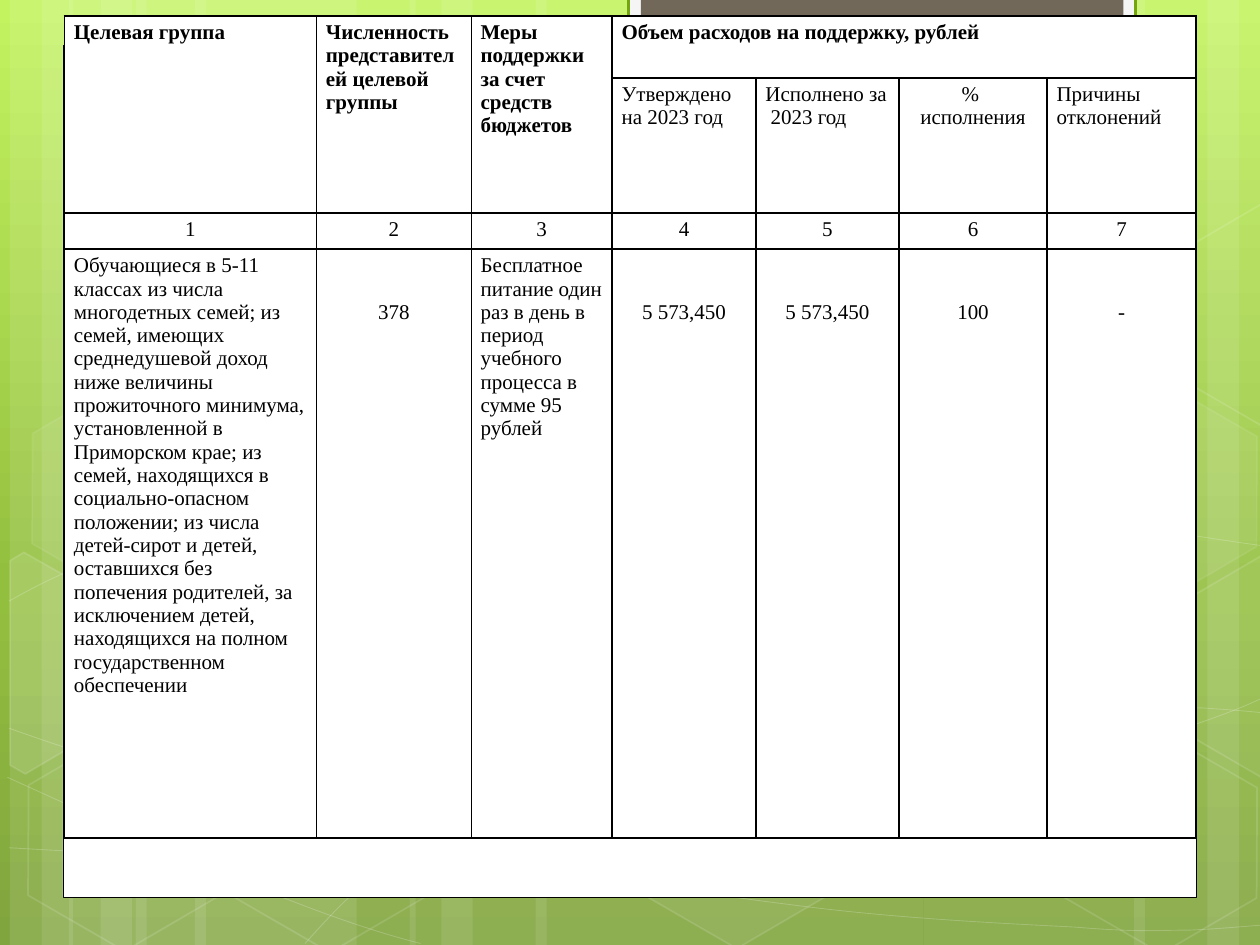
import math
from copy import deepcopy
from dataclasses import dataclass
from typing import Optional

from lxml import etree
from pptx import Presentation, util as u
from pptx.dml.color import RGBColor
from pptx.enum import shapes, text
from pptx.oxml.ns import qn


@dataclass(frozen=True)
class Theme:
    white: str = "FFFFFF"
    black: str = "000000"
    tab_edge: str = "F5F5F5"
    tab_line: str = "74A510"
    tab: str = "71685A"
    sky: tuple = ((0, "C3F35F"), (0.62, "93BF3F"), (1, "81A53E"))
    font: str = "Times New Roman"
    size: int = 12


THEME = Theme()


@dataclass
class Look:
    """Fill and outline; opacities in percent."""
    fill: Optional[str] = None
    fill_alpha: int = 100
    line: Optional[str] = None
    line_alpha: int = 100
    width: float = 1


@dataclass
class Block:
    left: float
    top: float
    width: float
    height: float
    look: Look
    kind: shapes.MSO_SHAPE = shapes.MSO_SHAPE.RECTANGLE
    rotation: float = 0
    adjustments: tuple = ()


@dataclass
class Entry:
    lines: list
    bold: bool = False
    centred: bool = False
    top: float = 0.1
    span: tuple = (1, 1)


def paint(target, colour: Optional[str], alpha: int) -> None:
    if colour is None:
        target.background()
        return
    target.solid()
    target.fore_color.rgb = RGBColor.from_string(colour)
    if alpha < 100:
        node = target._xPr.find(".//" + qn("a:srgbClr"))
        etree.SubElement(node, qn("a:alpha"), val=str(alpha * 1000))


def dress(shape, look: Look) -> None:
    shape.shadow.inherit = False
    paint(shape.fill, look.fill, look.fill_alpha)
    paint(shape.line.fill, look.line, look.line_alpha)
    if look.line:
        shape.line.width = u.Pt(look.width)


def draw_block(page, block: Block) -> None:
    frame = (u.Cm(v) for v in (block.left, block.top, block.width, block.height))
    shape = page.shapes.add_shape(block.kind, *frame)
    shape.rotation = block.rotation
    for index, value in enumerate(block.adjustments):
        shape.adjustments[index] = value
    dress(shape, block.look)


def draw_outline(page, points: list, look: Look, close: bool):
    spots = [(u.Cm(x), u.Cm(y)) for x, y in points]
    builder = page.shapes.build_freeform(*spots[0], scale=1.0)
    builder.add_line_segments(spots[1:], close=close)
    shape = builder.convert_to_shape()
    dress(shape, look)
    return shape


def draw_curve(page, knots: list) -> None:
    """Draw the knots, then turn every three segments into one cubic curve."""
    look = Look(line=THEME.white, line_alpha=20, width=0.5)
    shape = draw_outline(page, knots, look, False)
    segments = shape._element.findall(".//" + qn("a:lnTo"))
    for start in range(0, len(segments), 3):
        curve = etree.Element(qn("a:cubicBezTo"))
        segments[start].addprevious(curve)
        for segment in segments[start:start + 3]:
            curve.append(segment[0])
            segment.getparent().remove(segment)


def draw_cut_hexagon(page, points: list, centre: tuple, look: Look, angle: float = 30) -> None:
    """Draw the outline upright and let the shape's rotation tilt it."""
    cos, sin = math.cos(math.radians(angle)), math.sin(math.radians(angle))
    offsets = [(x - centre[0], y - centre[1]) for x, y in points]
    upright = [(centre[0] + x * cos + y * sin, centre[1] - x * sin + y * cos)
               for x, y in offsets]
    draw_outline(page, upright, look, True).rotation = angle


def glass(fill_alpha: int, line_alpha: int) -> Look:
    return Look(THEME.white if fill_alpha else None, fill_alpha, THEME.white, line_alpha)


def fill_cell(cell, entry: Entry) -> None:
    properties = cell._tc.get_or_add_tcPr()
    for side in ("lnL", "lnR", "lnT", "lnB"):
        edge = etree.SubElement(properties, qn("a:" + side), w=str(u.Pt(1)))
        solid = etree.SubElement(edge, qn("a:solidFill"))
        etree.SubElement(solid, qn("a:srgbClr"), val=THEME.black)
    paint(cell.fill, THEME.white, 100)
    margins = {"margin_left": 0.19, "margin_right": 0.19,
               "margin_top": entry.top, "margin_bottom": 0.1}
    for name, value in margins.items():
        setattr(cell, name, u.Cm(value))
    formats = {"name": THEME.font, "size": u.Pt(THEME.size), "bold": entry.bold}
    for index, line in enumerate(entry.lines):
        frame = cell.text_frame
        para = frame.add_paragraph() if index else frame.paragraphs[0]
        para.alignment = text.PP_ALIGN.CENTER if entry.centred else text.PP_ALIGN.LEFT
        span = para.add_run()
        span.text = line
        for name, value in formats.items():
            setattr(span.font, name, value)
        span.font.color.rgb = RGBColor.from_string(THEME.black)


# Background decoration, in centimetres
STRIPES = [(left + shift, width) for shift, wide in ((0, 4.45), (1.19, 4.45), (8.06, 7.82))
           for left, width in ((2.74, wide), (0.2, 1.27), (0.84, 2.12))]
STRIPES += [(18.63, 4.45), (24.34, 1.27), (22.86, 2.12)]

CURVES = [
    [(0.18, 17.09), (1.55, 17.17), (2.92, 17.25), (4.83, 17.22), (6.73, 17.2), (9.09, 17.15),
     (11.63, 16.89), (14.17, 16.64), (17.78, 16.15), (20.12, 15.67), (22.43, 15.19),
     (24.82, 14.43), (25.58, 14)],
    [(0.18, 12.12), (0.91, 11.71), (1.65, 11.33), (3.07, 10.95), (4.52, 10.57), (6.58, 10.01),
     (8.81, 9.83), (11.07, 9.65), (13.82, 9.63), (16.61, 9.83), (19.41, 10.03),
     (24.05, 10.82), (25.58, 11.02)],
    [(0.15, 15.67), (3.23, 17.07), (6.27, 18.47), (8.48, 19.02)],
    [(0.18, 14.68), (0.97, 14.96), (1.78, 15.24), (3.25, 15.65), (4.72, 16.03), (6.93, 16.66),
     (9.07, 17.09), (11.18, 17.53), (13.84, 17.98), (15.95, 18.24), (18.06, 18.52),
     (20.32, 18.62), (21.67, 18.69), (22.99, 18.8), (23.34, 18.75), (24, 18.75),
     (24.66, 18.72), (25.12, 18.67), (25.58, 18.64)],
    [(6.15, 19.02), (6.6, 18.52), (7.06, 18.01), (7.67, 17.55), (8.28, 17.09), (9.14, 16.59),
     (9.86, 16.23), (10.57, 15.88), (11, 15.72), (11.94, 15.47), (12.85, 15.21),
     (14.55, 14.86), (15.44, 14.68), (16.36, 14.5), (16.48, 14.5), (17.27, 14.45),
     (18.06, 14.38), (19.3, 14.3), (20.17, 14.27), (21.06, 14.25), (22.5, 14.27),
     (22.5, 14.27), (22.5, 14.27), (24.21, 14.27), (24.21, 14.27), (24.66, 14.3),
     (25.1, 14.33), (25.55, 14.38)],
]
# left, top, fill opacity, line opacity
HEXAGONS = [(8.48, 0.91, 4, 8), (12.62, 14.96, 6, 12), (0.28, 15.01, 0, 12),
            (0.36, 7.92, 7, 8), (4.42, 15.04, 0, 12), (19.13, 11.51, 10, 12),
            (21.18, 15.06, 0, 12), (21.18, 7.98, 7, 8)]
LEFT_PART = [(0.2, 11.3), (0.48, 11.13), (2.44, 12.24), (2.41, 14.48), (0.51, 15.6), (0.2, 15.42)]
RIGHT_PART = [(23.52, 12.32), (25.43, 11.2), (25.63, 11.33), (25.63, 15.57), (25.45, 15.67),
              (23.52, 14.55)]

# Table content; None marks a cell covered by a merge
COLUMNS = (5.08, 3.12, 2.84, 2.9, 2.88, 2.99, 3)
ROWS = (1.25, 2.72, 0.73, 11.87)
HEADS = ("Целевая группа", "Численность представителей целевой группы",
         "Меры поддержки за счет средств бюджетов")


def figure(value: str) -> Entry:
    return Entry([value], centred=True, top=1.04)


TABLE = [
    [Entry([head], bold=True, span=(2, 1)) for head in HEADS]
    + [Entry(["Объем расходов на поддержку, рублей"], bold=True, span=(1, 4)), None, None, None],
    [None, None, None, Entry(["Утверждено на 2023 год"]), Entry(["Исполнено за  2023 год"]),
     Entry(["% ", "исполнения"], centred=True), Entry(["Причины отклонений"])],
    [Entry([str(number)], centred=True) for number in range(1, 8)],
    [Entry(["Обучающиеся в 5-11 классах из числа многодетных семей; из семей, имеющих "
            "среднедушевой доход ниже величины прожиточного минимума, установленной в "
            "Приморском крае; из семей, находящихся в социально-опасном положении; из числа "
            "детей-сирот и детей, оставшихся без попечения родителей, за исключением детей, "
            "находящихся на полном государственном обеспечении"]),
     figure("378"),
     Entry(["Бесплатное питание один раз в день в период учебного процесса в сумме 95 рублей"]),
     figure("5 573,450"), figure("5 573,450"), figure("100"), figure("-")],
]


def draw_sky(layout) -> None:
    sky = layout.background.fill
    sky.gradient()
    sky.gradient_angle = 270
    stops = layout.element.find(".//" + qn("a:gsLst"))
    stops.append(deepcopy(stops[0]))
    for stop, (position, colour) in zip(sky.gradient_stops, THEME.sky):
        stop.position = position
        stop.color.rgb = RGBColor.from_string(colour)


def draw_decoration(page) -> None:
    for left, width in STRIPES:
        draw_block(page, Block(left, 0, width, 19.05, Look(THEME.white, 10)))
    for knots in CURVES:
        draw_curve(page, knots)
    for left, top, fill_alpha, line_alpha in HEXAGONS:
        draw_block(page, Block(left, top, 4.45, 3.86, glass(fill_alpha, line_alpha),
                               shapes.MSO_SHAPE.HEXAGON, 30, (0.285, 1.155)))
    draw_cut_hexagon(page, LEFT_PART, (0.91, 13.59), glass(10, 12))
    for rise, look in ((0, glass(4, 12)), (7.09, glass(0, 12))):
        raised = [(x, y - rise) for x, y in RIGHT_PART]
        draw_cut_hexagon(page, raised, (25.02, 13.21 - rise), look)
    # White panel and the tab on its top edge
    draw_block(page, Block(1.27, 0.91, 22.86, 17.18, Look(THEME.white, line=THEME.black, width=0.5)))
    draw_block(page, Block(12.67, -0.05, 10.22, 1.93,
                           Look(THEME.tab_edge, line=THEME.tab_line, width=1.5)))
    draw_block(page, Block(12.92, -0.05, 9.73, 1.73, Look(THEME.tab)))


def move_to_layout(page, layout) -> None:
    for holder in list(layout.placeholders):
        holder._element.getparent().remove(holder._element)
    for shape in list(page.shapes):
        layout.shapes._spTree.append(shape._element)


def draw_table(page) -> None:
    table = page.shapes.add_table(len(ROWS), len(COLUMNS), u.Cm(1.3), u.Cm(0.32),
                                  u.Cm(sum(COLUMNS)), u.Cm(sum(ROWS))).table
    for column, width in zip(table.columns, COLUMNS):
        column.width = u.Cm(width)
    for row, height in zip(table.rows, ROWS):
        row.height = u.Cm(height)
    for r, entries in enumerate(TABLE):
        for c, entry in enumerate(entries):
            cell = table.cell(r, c)
            fill_cell(cell, entry or Entry([]))
            if entry and entry.span != (1, 1):
                cell.merge(table.cell(r + entry.span[0] - 1, c + entry.span[1] - 1))


def main() -> None:
    deck = Presentation()
    deck.slide_width, deck.slide_height = u.Cm(25.4), u.Cm(19.05)
    layout = deck.slide_layouts[6]
    page = deck.slides.add_slide(layout)
    draw_sky(layout)
    draw_decoration(page)
    move_to_layout(page, layout)
    draw_table(page)
    deck.save("out.pptx")


if __name__ == "__main__":
    main()
